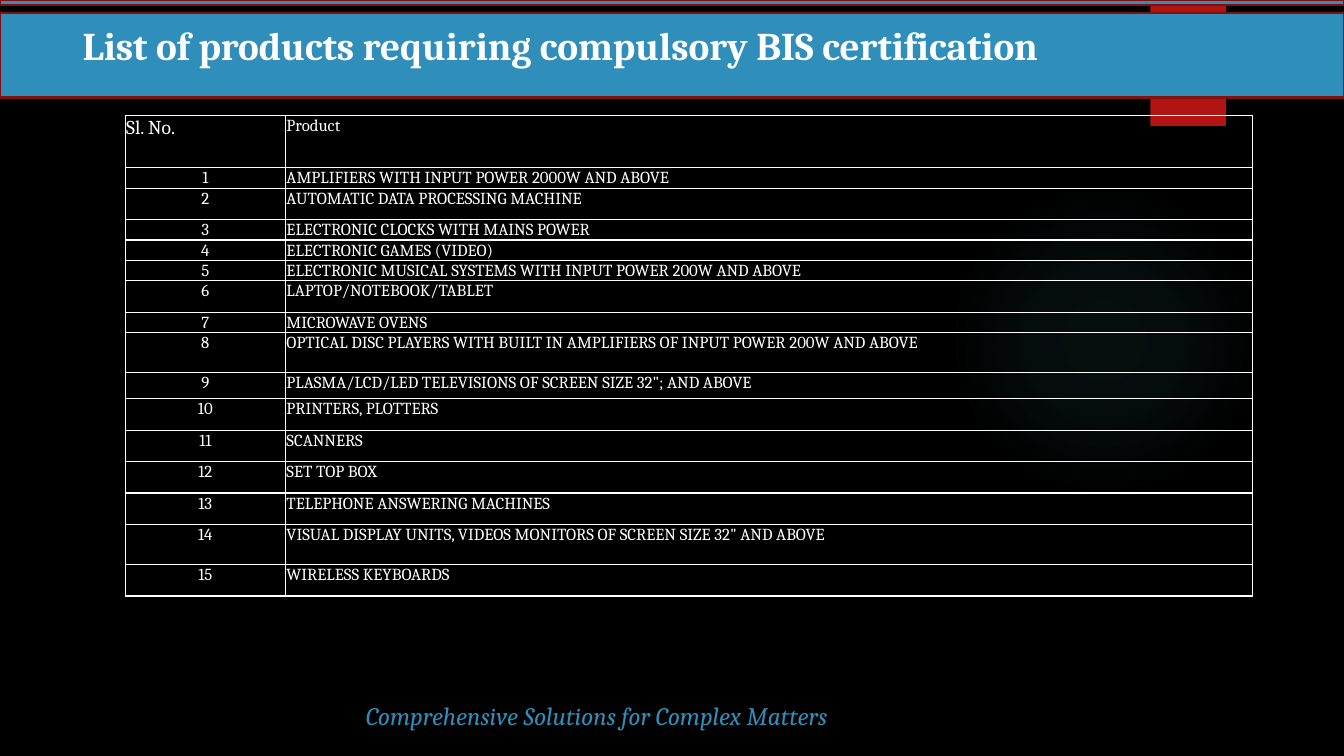
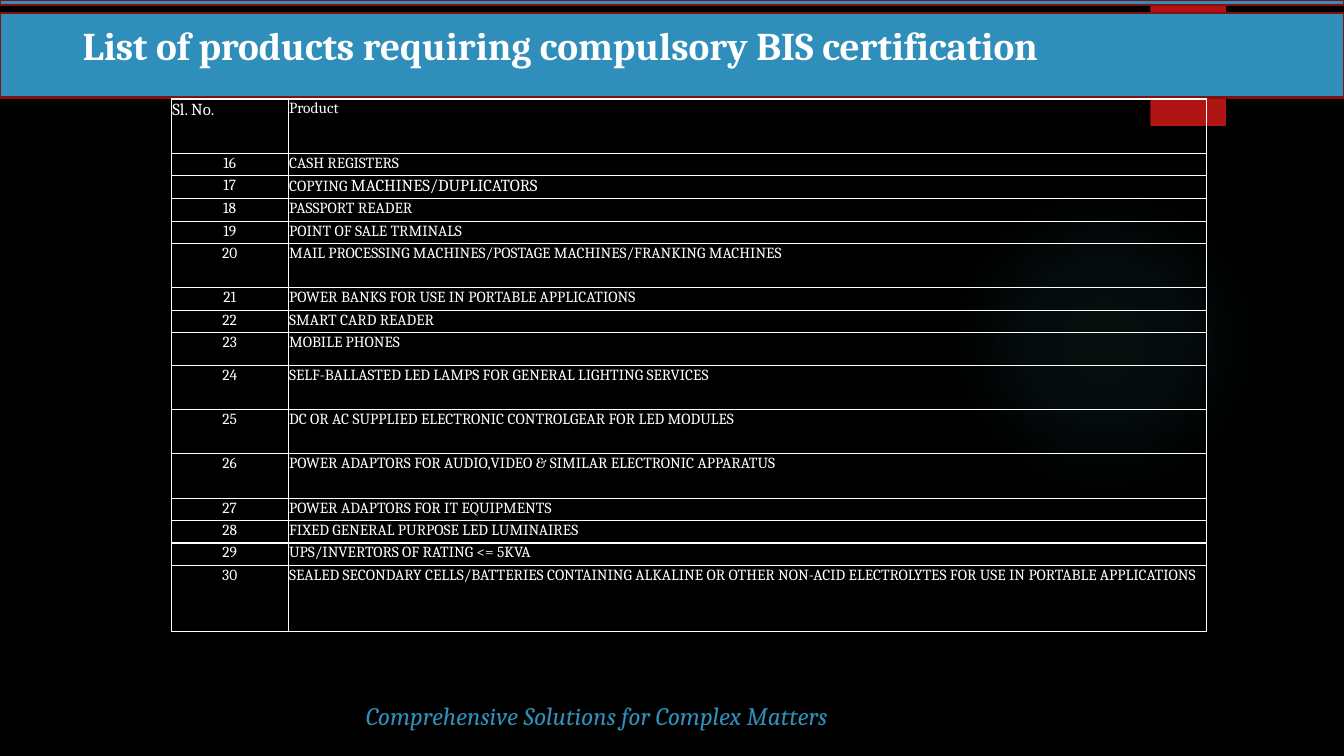
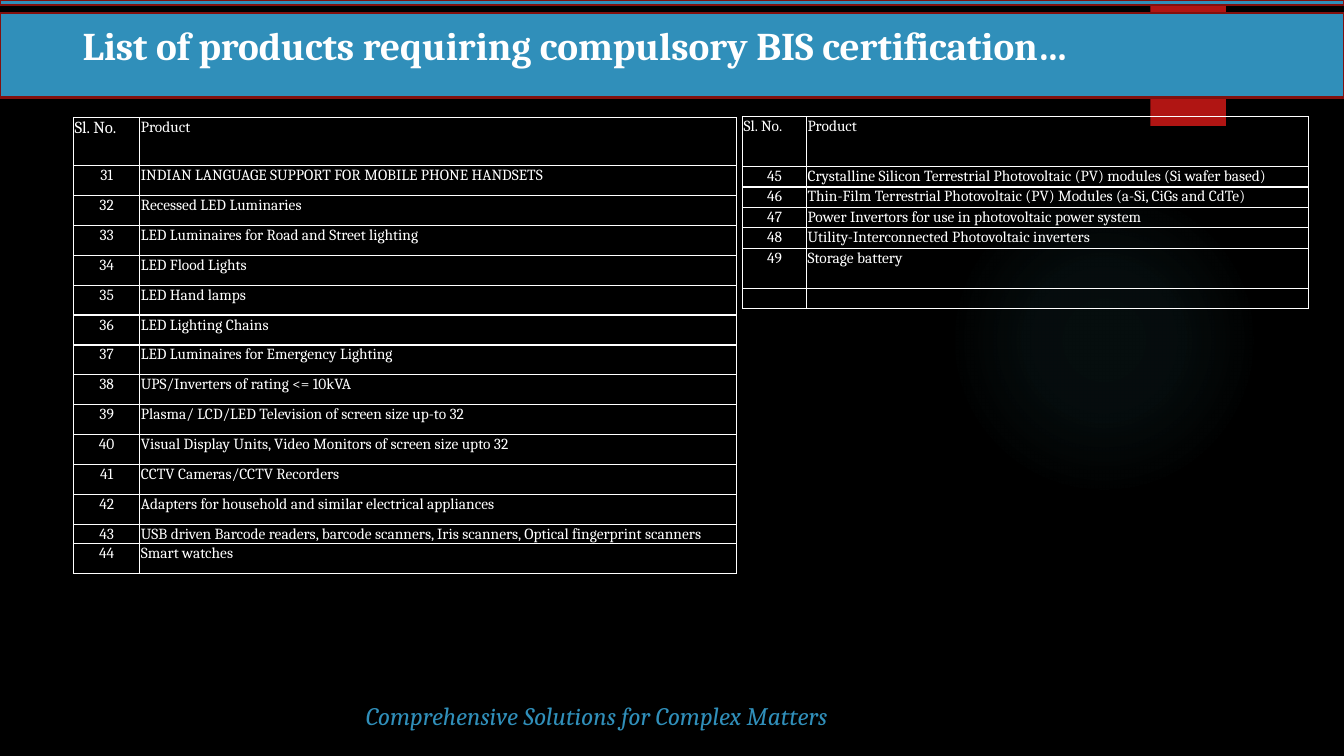
"""Build three slides listing products that require compulsory certification."""
from lxml import etree
from pptx import Presentation
from pptx.dml.color import RGBColor
from pptx.enum.shapes import MSO_SHAPE
from pptx.enum.text import MSO_ANCHOR, MSO_AUTO_SIZE, PP_ALIGN
from pptx.oxml import parse_xml
from pptx.oxml.ns import nsdecls, qn
from pptx.util import Pt

RECTANGLE, OVAL = MSO_SHAPE.RECTANGLE, MSO_SHAPE.OVAL
TOP, MIDDLE = MSO_ANCHOR.TOP, MSO_ANCHOR.MIDDLE
NO_FIT = MSO_AUTO_SIZE.NONE
LEFT, CENTER = PP_ALIGN.LEFT, PP_ALIGN.CENTER

BLACK = RGBColor(0x00, 0x00, 0x00)
WHITE = RGBColor(0xFF, 0xFF, 0xFF)
BLUE = RGBColor(0x30, 0x8F, 0xBA)
RED = RGBColor(0xB0, 0x15, 0x13)
DARK_RED = RGBColor(0x82, 0x10, 0x0E)
TEAL = RGBColor(0x50, 0xB9, 0xC1)

FONT = "Cambria"
TITLE_FONT = {"name": FONT, "size": Pt(28), "bold": True, "italic": False}
TAGLINE_FONT = {"name": FONT, "size": Pt(18), "bold": False, "italic": True}
TITLE_FRAME = {"vertical_anchor": TOP, "auto_size": NO_FIT, "word_wrap": True}
TAGLINE_FRAME = {"vertical_anchor": MIDDLE, "auto_size": NO_FIT, "word_wrap": True}
TITLE_BOX = {"left": Pt(51.8), "top": Pt(11.5), "width": Pt(841.7), "height": Pt(59)}
CELL_FORMAT = {
    "margin_left": Pt(0.75), "margin_right": Pt(0.75),
    "margin_top": Pt(0.75), "margin_bottom": Pt(0), "vertical_anchor": TOP,
}

SLIDE_WIDTH, SLIDE_HEIGHT = 960, 540
TITLE = "List of products requiring compulsory BIS certification"
TAGLINE = "Comprehensive Solutions for Complex Matters"

FIRST_TABLE = {
    "place": (89.4, 82.6), "columns": (114.5, 690.5), "header_height": 37.2,
    "label_size": 14, "size": 12, "start": 1,
    "rows": [
        (14.5, "AMPLIFIERS WITH INPUT POWER 2000W AND ABOVE"),
        (22.5, "AUTOMATIC DATA PROCESSING MACHINE"),
        (14.5, "ELECTRONIC CLOCKS WITH MAINS POWER"),
        (14.5, "ELECTRONIC GAMES (VIDEO)"),
        (14.5, "ELECTRONIC MUSICAL SYSTEMS WITH INPUT POWER 200W AND ABOVE"),
        (22.5, "LAPTOP/NOTEBOOK/TABLET"),
        (14.5, "MICROWAVE OVENS"),
        (28.6, "OPTICAL DISC PLAYERS WITH BUILT IN AMPLIFIERS OF INPUT POWER 200W AND ABOVE"),
        (18.6, "PLASMA/LCD/LED TELEVISIONS OF SCREEN SIZE 32\"; AND ABOVE"),
        (22.5, "PRINTERS, PLOTTERS"),
        (22.5, "SCANNERS"),
        (22.5, "SET TOP BOX"),
        (22.5, "TELEPHONE ANSWERING MACHINES"),
        (28.6, "VISUAL DISPLAY UNITS, VIDEOS MONITORS OF SCREEN SIZE 32\" AND ABOVE"),
        (22.5, "WIRELESS KEYBOARDS"),
    ],
}
SECOND_TABLE = {
    "place": (122.4, 70.7), "columns": (83.4, 656), "header_height": 38.9,
    "label_size": 12, "size": 11, "start": 16,
    "rows": [
        (16, "CASH REGISTERS"),
        (16.4, [("COPYING ", 11), ("MACHINES/DUPLICATORS", 12)]),
        (16, "PASSPORT READER"),
        (16, "POINT OF SALE TRMINALS"),
        (31.7, "MAIL PROCESSING MACHINES/POSTAGE MACHINES/FRANKING MACHINES"),
        (16, "POWER BANKS FOR USE IN PORTABLE APPLICATIONS"),
        (16, "SMART CARD READER"),
        (23.2, "MOBILE PHONES"),
        (31.7, "SELF-BALLASTED LED LAMPS FOR GENERAL LIGHTING SERVICES"),
        (31.7, "DC OR AC SUPPLIED ELECTRONIC CONTROLGEAR FOR LED MODULES"),
        (31.7, "POWER ADAPTORS FOR AUDIO,VIDEO & SIMILAR ELECTRONIC APPARATUS"),
        (16, "POWER ADAPTORS FOR IT EQUIPMENTS"),
        (16, "FIXED GENERAL PURPOSE LED LUMINAIRES"),
        (16, "UPS/INVERTORS OF RATING <= 5KVA"),
        (47.3, "SEALED SECONDARY CELLS/BATTERIES CONTAINING ALKALINE OR OTHER NON-ACID "
               "ELECTROLYTES FOR USE IN PORTABLE APPLICATIONS"),
    ],
}
THIRD_TABLE = {
    "place": (52.5, 84.1), "columns": (47.4, 426.3), "header_height": 34.1,
    "label_size": 12, "size": 11, "start": 31,
    "rows": [
        (21.4, "INDIAN LANGUAGE SUPPORT FOR MOBILE PHONE HANDSETS"),
        (21.4, "Recessed LED Luminaries"),
        (21.4, "LED Luminaires for Road and Street lighting"),
        (21.4, "LED Flood Lights"),
        (21.4, "LED Hand lamps"),
        (21.4, "LED Lighting Chains"),
        (21.4, "LED Luminaires for Emergency Lighting"),
        (21.4, "UPS/Inverters of rating <= 10kVA"),
        (21.4, "Plasma/ LCD/LED Television of screen size up-to 32"),
        (21.4, "Visual Display Units, Video Monitors of screen size upto 32"),
        (21.4, "CCTV Cameras/CCTV Recorders"),
        (21.4, "Adapters for household and similar electrical appliances"),
        (13.5, "USB driven Barcode readers, barcode scanners, Iris scanners, "
               "Optical fingerprint scanners"),
        (21.4, "Smart watches"),
    ],
}
FOURTH_TABLE = {
    "place": (530.5, 83.4), "columns": (45.6, 358.7), "header_height": 35.6,
    "label_size": 11, "size": 11, "start": 45,
    "rows": [
        (14.6, "Crystalline Silicon Terrestrial Photovoltaic (PV) modules (Si wafer based)"),
        (14.6, "Thin-Film Terrestrial Photovoltaic (PV) Modules (a-Si, CiGs and CdTe)"),
        (14.6, "Power Invertors for use in photovoltaic power system"),
        (14.6, "Utility-Interconnected Photovoltaic inverters"),
        (28.6, "Storage battery"),
        (14.6, ""),
    ],
}
SLIDES = [
    (TITLE, [FIRST_TABLE]),
    (TITLE, [SECOND_TABLE]),
    (TITLE + "…", [THIRD_TABLE, FOURTH_TABLE]),
]


def apply_format(target, values):
    """Set every attribute named in a dict of format values."""
    for name, value in values.items():
        setattr(target, name, value)


def add_run(paragraph, text, font_format, color):
    """Add one formatted run to a paragraph."""
    run = paragraph.add_run()
    run.text = text
    apply_format(run.font, font_format)
    run.font.color.rgb = color


def add_block(slide, box, fill_color, line_color=None, preset=RECTANGLE):
    """Add a flat shape without a shadow."""
    shape = slide.shapes.add_shape(preset, *map(Pt, box))
    shape.shadow.inherit = False
    shape.fill.solid()
    shape.fill.fore_color.rgb = fill_color
    if line_color is None:
        shape.line.fill.background()
    else:
        shape.line.color.rgb = line_color
        shape.line.width = Pt(1.5)
    return shape


def set_glow(shape, color):
    """Replace the solid fill by a faint circular gradient."""
    stops = "".join(
        f'<a:gs pos="{position}000"><a:srgbClr val="{color}">'
        f'<a:alpha val="{alpha}000"/></a:srgbClr></a:gs>'
        for position, alpha in ((0, 7), (36, 6), (69, 0))
    )
    gradient = parse_xml(
        f'<a:gradFill {nsdecls("a")} rotWithShape="1"><a:gsLst>{stops}</a:gsLst>'
        '<a:path path="circle"><a:fillToRect l="50000" t="50000" r="50000" b="50000"/>'
        '</a:path></a:gradFill>'
    )
    properties = shape.element.spPr
    properties.replace(properties.find(qn("a:solidFill")), gradient)


def set_shadow(shape):
    """Give a shape a soft shadow below it."""
    shape.element.spPr.find(qn("a:effectLst")).append(parse_xml(
        f'<a:outerShdw {nsdecls("a")} blurRad="{Pt(3)}" dist="{Pt(2)}" dir="5400000" '
        f'rotWithShape="0"><a:srgbClr val="{BLACK}"><a:alpha val="45000"/></a:srgbClr>'
        '</a:outerShdw>'
    ))


def style_layout(layout, slide):
    """Put the background, bands, tagline and title place on the layout."""
    layout.background.fill.solid()
    layout.background.fill.fore_color.rgb = BLACK
    apply_format(layout.placeholders[0], TITLE_BOX)
    glow = add_block(slide, (677.5, 131.8, 221.8, 221.8), TEAL, preset=OVAL)
    set_glow(glow, TEAL)
    ribbon = add_block(slide, (821.7, 0, 54, 90), RED)
    set_shadow(ribbon)
    top_stripe = add_block(slide, (0, 0, SLIDE_WIDTH, 3.6), BLUE, DARK_RED)
    title_band = add_block(slide, (0, 9.2, SLIDE_WIDTH, 60.5), BLUE, DARK_RED)
    tagline = add_block(slide, (254.2, 496.8, 582.5, 29.1), BLACK)
    apply_format(tagline.text_frame, TAGLINE_FRAME)
    paragraph = tagline.text_frame.paragraphs[0]
    paragraph.alignment = LEFT
    add_run(paragraph, TAGLINE, TAGLINE_FONT, BLUE)
    for index, shape in enumerate((glow, ribbon, top_stripe, title_band, tagline), 2):
        layout.shapes.element.insert(index, shape.element)


def add_title(slide, text):
    """Fill the title placeholder."""
    frame = slide.shapes.title.text_frame
    apply_format(frame, TITLE_FRAME)
    paragraph = frame.paragraphs[0]
    paragraph.alignment = LEFT
    add_run(paragraph, text, TITLE_FONT, WHITE)


def set_borders(cell):
    """Draw thin white lines on all sides of a cell."""
    properties = cell._tc.get_or_add_tcPr()
    for index, side in enumerate("LRTB"):
        properties.insert(index, parse_xml(
            f'<a:ln{side} {nsdecls("a")} w="{Pt(1)}"><a:solidFill>'
            f'<a:srgbClr val="{WHITE}"/></a:solidFill></a:ln{side}>'
        ))


def fill_cell(cell, content, size, alignment=LEFT):
    """Write text, or pieces of text with sizes, in a bordered clear cell."""
    apply_format(cell, CELL_FORMAT)
    cell.fill.background()
    set_borders(cell)
    paragraph = cell.text_frame.paragraphs[0]
    paragraph.alignment = alignment
    if not content:
        etree.SubElement(paragraph._p, qn("a:endParaRPr"), sz=str(size * 100))
        return
    pieces = [(content, size)] if isinstance(content, str) else content
    for text, piece_size in pieces:
        add_run(paragraph, text, {"name": FONT, "size": Pt(piece_size)}, WHITE)


def add_product_table(slide, data):
    """Add a table of numbered products."""
    heights = [data["header_height"]] + [height for height, _ in data["rows"]]
    columns, size = data["columns"], data["size"]
    box = (*data["place"], sum(columns), sum(heights))
    table = slide.shapes.add_table(len(heights), len(columns), *map(Pt, box)).table
    apply_format(table, {"first_row": False, "horz_banding": False})
    for column, width in zip(table.columns, columns):
        column.width = Pt(width)
    for row, height in zip(table.rows, heights):
        row.height = Pt(height)
    fill_cell(table.cell(0, 0), "Sl. No.", data["label_size"])
    fill_cell(table.cell(0, 1), "Product", size)
    for index, (_, product) in enumerate(data["rows"]):
        number = str(data["start"] + index) if product else ""
        fill_cell(table.cell(index + 1, 0), number, size, CENTER)
        fill_cell(table.cell(index + 1, 1), product, size)


def main():
    """Build and save the presentation."""
    presentation = Presentation()
    presentation.slide_width = Pt(SLIDE_WIDTH)
    presentation.slide_height = Pt(SLIDE_HEIGHT)
    layout = presentation.slide_layouts[5]
    slides = [presentation.slides.add_slide(layout) for _ in SLIDES]
    style_layout(layout, slides[0])
    for slide, (title, tables) in zip(slides, SLIDES):
        add_title(slide, title)
        for data in tables:
            add_product_table(slide, data)
    presentation.save("out.pptx")


if __name__ == "__main__":
    main()
